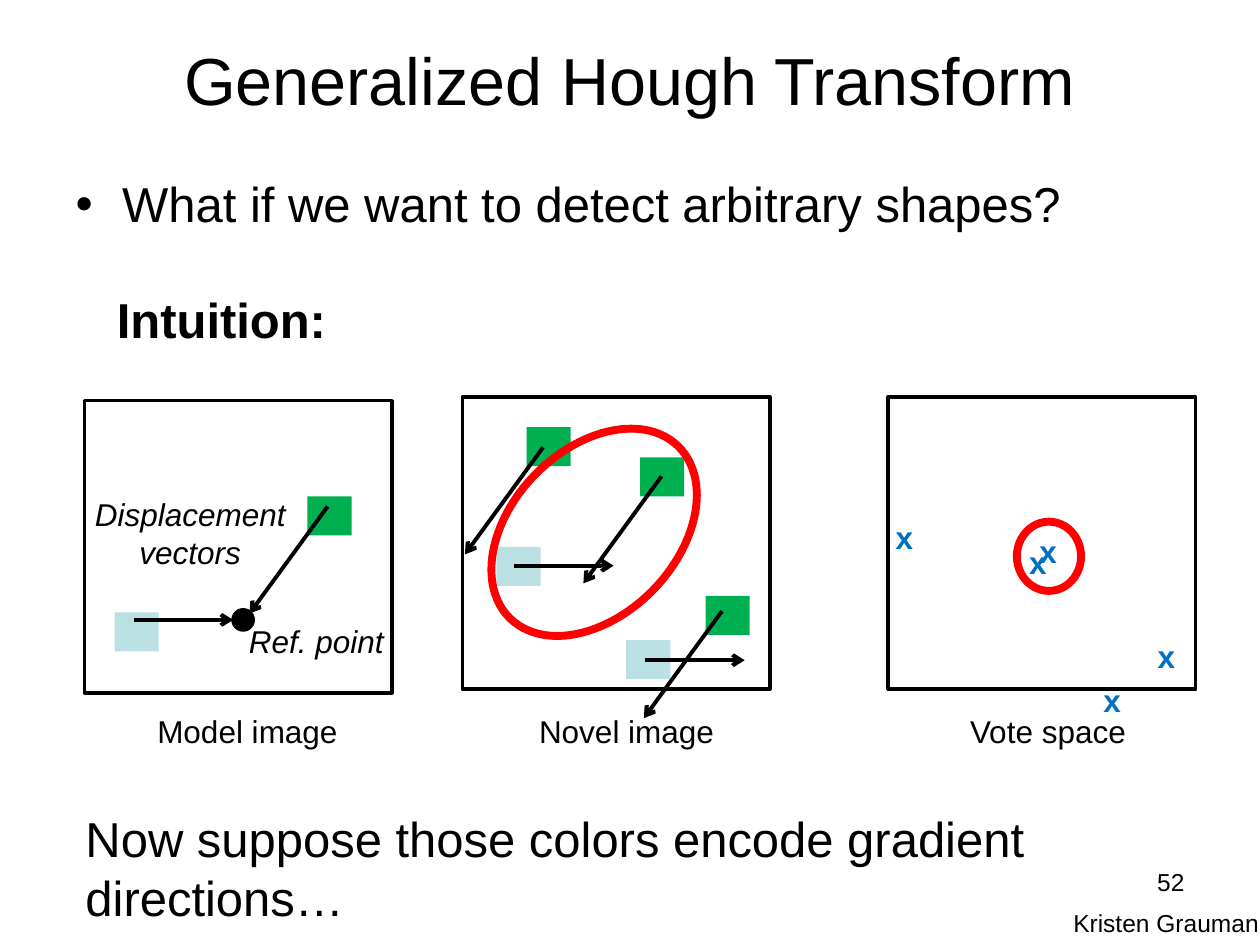
from pptx import Presentation
from pptx.dml.color import RGBColor
from pptx.enum.shapes import MSO_CONNECTOR, MSO_SHAPE
from pptx.enum.text import MSO_ANCHOR, MSO_AUTO_SIZE, PP_ALIGN
from pptx.oxml.ns import qn
from pptx.util import Inches, Pt
from lxml import etree

RECT, ELLIPSE = MSO_SHAPE.RECTANGLE, MSO_SHAPE.OVAL
STRAIGHT = MSO_CONNECTOR.STRAIGHT
LEFT, CENTER, RIGHT = PP_ALIGN.LEFT, PP_ALIGN.CENTER, PP_ALIGN.RIGHT
TOP, MIDDLE = MSO_ANCHOR.TOP, MSO_ANCHOR.MIDDLE
NO_AUTOFIT = MSO_AUTO_SIZE.NONE

BLACK, RED, BLUE = "000000", "FF0000", "0070C0"
GREEN, PALE = "00B050", "BBE0E3"
PANEL_SIZE = (2.44, 2.32)
PATCH_SIZE = (0.35, 0.31)
SLANTED = (-0.62, 0.85)
LEVEL = (0.79, 0)

PANELS = [(0.67, 3.18), (3.67, 3.15), (7.05, 3.15)]
CAPTIONS = [("Model image", 1.15, 1.65), ("Novel image", 4.18, 1.6),
            ("Vote space", 7.6, 1.45)]
PATCHES = [(0.91, 4.86, PALE), (2.44, 3.94, GREEN), (4.18, 3.39, GREEN),
           (5.08, 3.63, GREEN), (3.94, 4.34, PALE), (4.97, 5.08, PALE),
           (5.6, 4.73, GREEN)]
VECTORS = [(2.6, 4.02, SLANTED), (1.06, 4.92, LEVEL), (5.25, 3.78, SLANTED),
           (4.08, 4.49, LEVEL), (5.12, 5.24, LEVEL), (5.73, 4.85, SLANTED),
           (4.31, 3.55, SLANTED)]
VOTES = [(8.07, 4.26), (8.15, 4.17), (7.01, 4.06), (8.66, 5.36), (9.09, 5.01)]


def rgb(hex_color):
    """Turn a hex string into a colour."""
    return RGBColor.from_string(hex_color)


def place(shape, left, top, width, height):
    """Move and size a shape, in inches."""
    box = {"left": left, "top": top, "width": width, "height": height}
    for name, value in box.items():
        setattr(shape, name, Inches(value))


def write(shape, text, size, color=BLACK, align=LEFT, anchor=TOP, wrap=True, **styles):
    """Fill a shape with one formatted paragraph and return that paragraph."""
    frame = shape.text_frame
    frame_format = {"word_wrap": wrap, "auto_size": NO_AUTOFIT, "vertical_anchor": anchor}
    for name, value in frame_format.items():
        setattr(frame, name, value)
    paragraph = frame.paragraphs[0]
    paragraph.alignment = align
    run = paragraph.add_run()
    run.text = text
    font_format = {"name": "Arial", "size": Pt(size), **styles}
    for name, value in font_format.items():
        setattr(run.font, name, value)
    run.font.color.rgb = rgb(color)
    return paragraph


def add_label(slide, text, box, size=18, **styles):
    """Add a text box."""
    label = slide.shapes.add_textbox(*map(Inches, box))
    write(label, text, size, **styles)


def add_figure(slide, preset, box, fill=None, line=None, weight=2, rotation=0):
    """Add a preset shape with an optional fill and outline."""
    figure = slide.shapes.add_shape(preset, *map(Inches, box))
    figure.shadow.inherit = False
    figure.rotation = rotation
    for part, color in ((figure.fill, fill), (figure.line.fill, line)):
        if color:
            part.solid()
            part.fore_color.rgb = rgb(color)
        else:
            part.background()
    if line:
        figure.line.width = Pt(weight)


def add_vector(slide, left, top, shift):
    """Add a displacement arrow from a start point."""
    ends = (left, top, left + shift[0], top + shift[1])
    vector = slide.shapes.add_connector(STRAIGHT, *map(Inches, ends))
    vector.line.color.rgb = rgb(BLACK)
    vector.line.width = Pt(2.25)
    properties = vector.line._get_or_add_ln()
    etree.SubElement(properties, qn("a:tailEnd"), type="arrow")
    etree.SubElement(vector._element.spPr, qn("a:effectLst"))


def add_headings(slide):
    """Fill the title and the bulleted question."""
    title, question = slide.placeholders
    place(title, 0, 0, 10, 1.25)
    write(title, "Generalized Hough Transform", 38, align=CENTER, anchor=MIDDLE)
    place(question, 0.5, 1.33, 9, 0.87)
    bullet = write(question, "What if we want to detect arbitrary shapes?", 28)
    bullet.space_before = Pt(5.6)
    properties = bullet._p.get_or_add_pPr()
    properties.set("marL", str(Inches(0.37)))
    properties.set("indent", str(-Inches(0.37)))
    etree.SubElement(properties, qn("a:buFont"), typeface="Arial")
    etree.SubElement(properties, qn("a:buChar"), char="•")


def add_diagram(slide):
    """Draw the model, novel and vote panels."""
    for corner in PANELS:
        add_figure(slide, RECT, (*corner, *PANEL_SIZE), line=BLACK)
    for caption, left, width in CAPTIONS:
        add_label(slide, caption, (left, 5.6, width, 0.4), wrap=False)
    for left, top, color in PATCHES:
        add_figure(slide, RECT, (left, top, *PATCH_SIZE), fill=color)
    add_figure(slide, ELLIPSE, (1.85, 4.84, 0.16, 0.16), fill=BLACK, line=BLACK)
    for vector in VECTORS:
        add_vector(slide, *vector)
    for vote in VOTES:
        add_label(slide, "x", (*vote, 0.4, 0.4), color=BLUE, bold=True)
    add_figure(slide, ELLIPSE, (8.07, 4.14, 0.51, 0.55), line=RED, weight=4.5)
    add_figure(slide, ELLIPSE, (4.06, 3.27, 1.31, 1.91), line=RED, weight=4.5,
               rotation=44.3)


def add_notes_around(slide):
    """Add the statements, diagram labels and footer."""
    add_label(slide, "Now suppose those colors encode gradient directions…",
              (0.58, 6.37, 9.41, 1.04), 28)
    add_label(slide, "Intuition:", (0.83, 2.25, 2.2, 0.57), 28, bold=True)
    add_label(slide, "Ref. point", (1.6, 4.89, 1.82, 0.4), align=CENTER, italic=True)
    add_label(slide, "Displacement vectors", (0.6, 3.88, 1.82, 0.71),
              align=CENTER, italic=True)
    add_label(slide, "Kristen Grauman", (8.42, 7.16, 2, 0.34), 14)
    add_label(slide, "52", (7.17, 6.83, 2.33, 0.52), 14, align=RIGHT)


def main():
    """Build and save the slide."""
    deck = Presentation()
    deck.slide_width, deck.slide_height = Inches(10), Inches(7.5)
    slide = deck.slides.add_slide(deck.slide_layouts[1])
    add_headings(slide)
    add_diagram(slide)
    add_notes_around(slide)
    deck.save("out.pptx")


if __name__ == "__main__":
    main()
